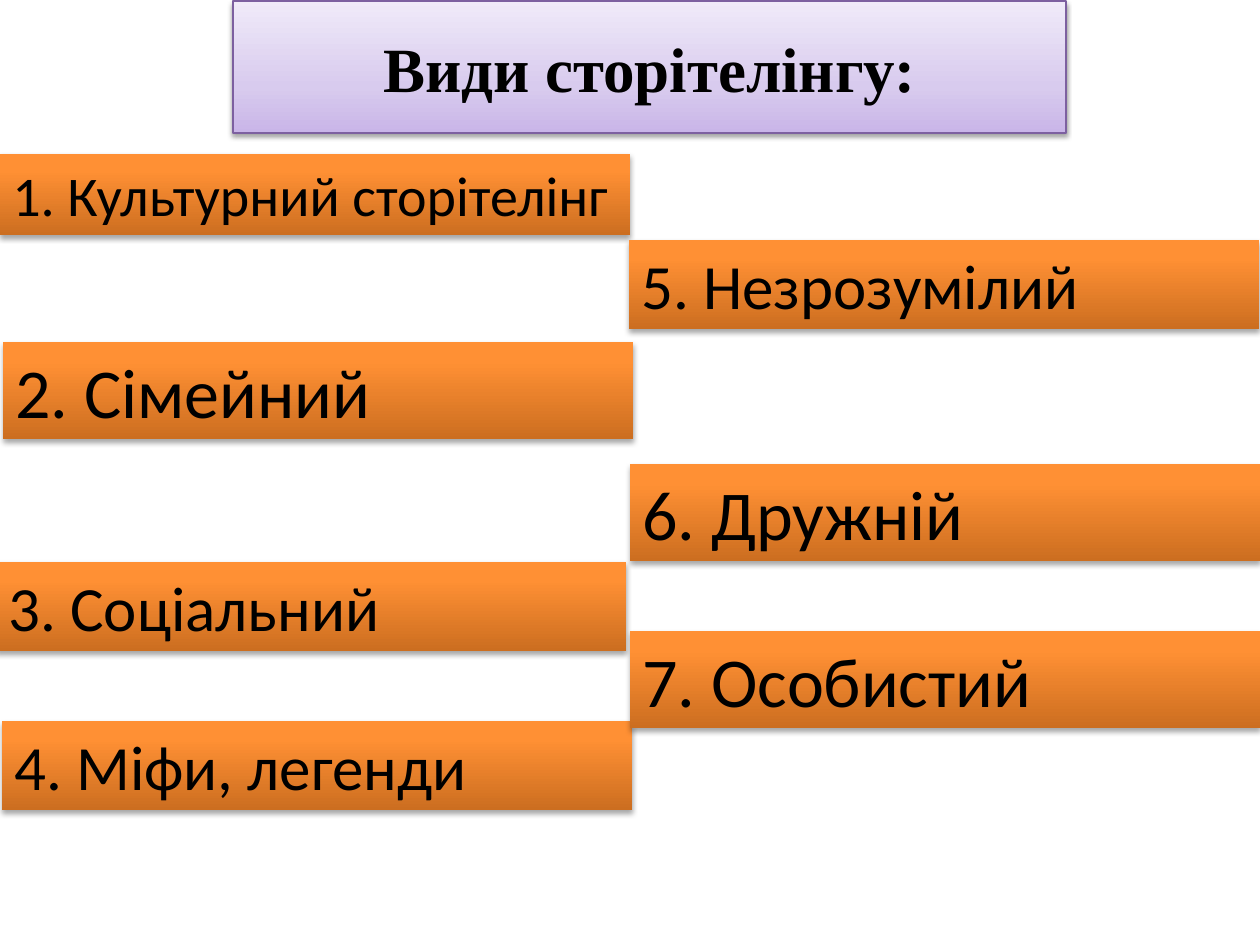
from copy import deepcopy

from lxml import etree
from pptx import Presentation
from pptx import util as u
from pptx.dml.color import RGBColor
from pptx.enum import shapes, text
from pptx.oxml.ns import qn

PX = 914400 // 126
COLORS = {"text": "000000", "shadow": "000000", "title_line": "7D60A0"}
TITLE_STOPS = [(0, "C9B5E8"), (0.35, "D8CBEE"), (1, "F0EAF9")]
BAR_STOPS = [(0, "CC6E20"), (0.8, "FF9034"), (1, "FF9136")]
BAR_WIDTH = 630
BAR_HEIGHTS = {32: 81, 36: 89, 40: 97}  # font size in points: height in px

# left, top, font size, wording
KINDS = [
    (0, 154, 32, "1. Культурний сторітелінг"),
    (3, 342, 40, "2. Сімейний"),
    (-4, 562, 36, "3. Соціальний"),
    (2, 721, 36, "4. Міфи, легенди"),
    (629, 240, 36, "5. Незрозумілий"),
    (630, 464, 40, "6. Дружній"),
    (630, 631, 40, "7. Особистий"),
]


def px(*lengths):
    return [u.Emu(length * PX) for length in lengths]


def fill_upward(shape, stops):
    """Fill with a three-stop gradient running from bottom to top."""
    shape.fill.gradient()
    stop_list = shape._element.spPr.find(".//" + qn("a:gsLst"))
    stop_list.append(deepcopy(stop_list[-1]))
    for stop, (position, color) in zip(shape.fill.gradient_stops, stops):
        stop.position = position
        stop.color.rgb = RGBColor.from_string(color)
    shape.fill.gradient_angle = 90


def drop_shadow(shape, distance, opacity):
    """Cast a soft shadow straight down; distance in points, opacity in percent."""
    shape.shadow.inherit = False
    effects = shape._element.spPr.find(qn("a:effectLst"))
    shadow = etree.SubElement(
        effects, qn("a:outerShdw"), blurRad=str(u.Pt(3.1)),
        dist=str(u.Pt(distance)), dir="5400000", rotWithShape="0")
    color = etree.SubElement(shadow, qn("a:srgbClr"), val=COLORS["shadow"])
    etree.SubElement(color, qn("a:alpha"), val=str(opacity * 1000))


def write(shape, wording, size, font, align, bold=False):
    paragraph = shape.text_frame.paragraphs[0]
    paragraph.alignment = align
    run = paragraph.add_run()
    run.text = wording
    run.font.name = font
    run.font.size = u.Pt(size)
    run.font.bold = bold
    run.font.color.rgb = RGBColor.from_string(COLORS["text"])


def add_title(slide, wording):
    title = slide.shapes.title
    title.left, title.top, title.width, title.height = px(233, 1, 833, 132)
    fill_upward(title, TITLE_STOPS)
    title.line.color.rgb = RGBColor.from_string(COLORS["title_line"])
    title.line.width = u.Pt(0.75)
    drop_shadow(title, 1.6, 38)
    title.text_frame.vertical_anchor = text.MSO_ANCHOR.MIDDLE
    write(title, wording, 36, "Times New Roman", text.PP_ALIGN.CENTER, bold=True)


def add_bar(slide, left, top, size, wording):
    bar = slide.shapes.add_shape(
        shapes.MSO_SHAPE.RECTANGLE, *px(left, top, BAR_WIDTH, BAR_HEIGHTS[size]))
    fill_upward(bar, BAR_STOPS)
    bar.line.fill.background()
    drop_shadow(bar, 1.8, 35)
    frame = bar.text_frame
    frame.word_wrap = True
    frame.auto_size = text.MSO_AUTO_SIZE.SHAPE_TO_FIT_TEXT
    frame.vertical_anchor = text.MSO_ANCHOR.TOP
    write(bar, wording, size, "Calibri", text.PP_ALIGN.LEFT)


def main():
    deck = Presentation()
    deck.slide_width, deck.slide_height = px(1260, 945)
    slide = deck.slides.add_slide(deck.slide_layouts.get_by_name("Title Only"))
    add_title(slide, "Види сторітелінгу:")
    for kind in KINDS:
        add_bar(slide, *kind)
    deck.save("out.pptx")


if __name__ == "__main__":
    main()
